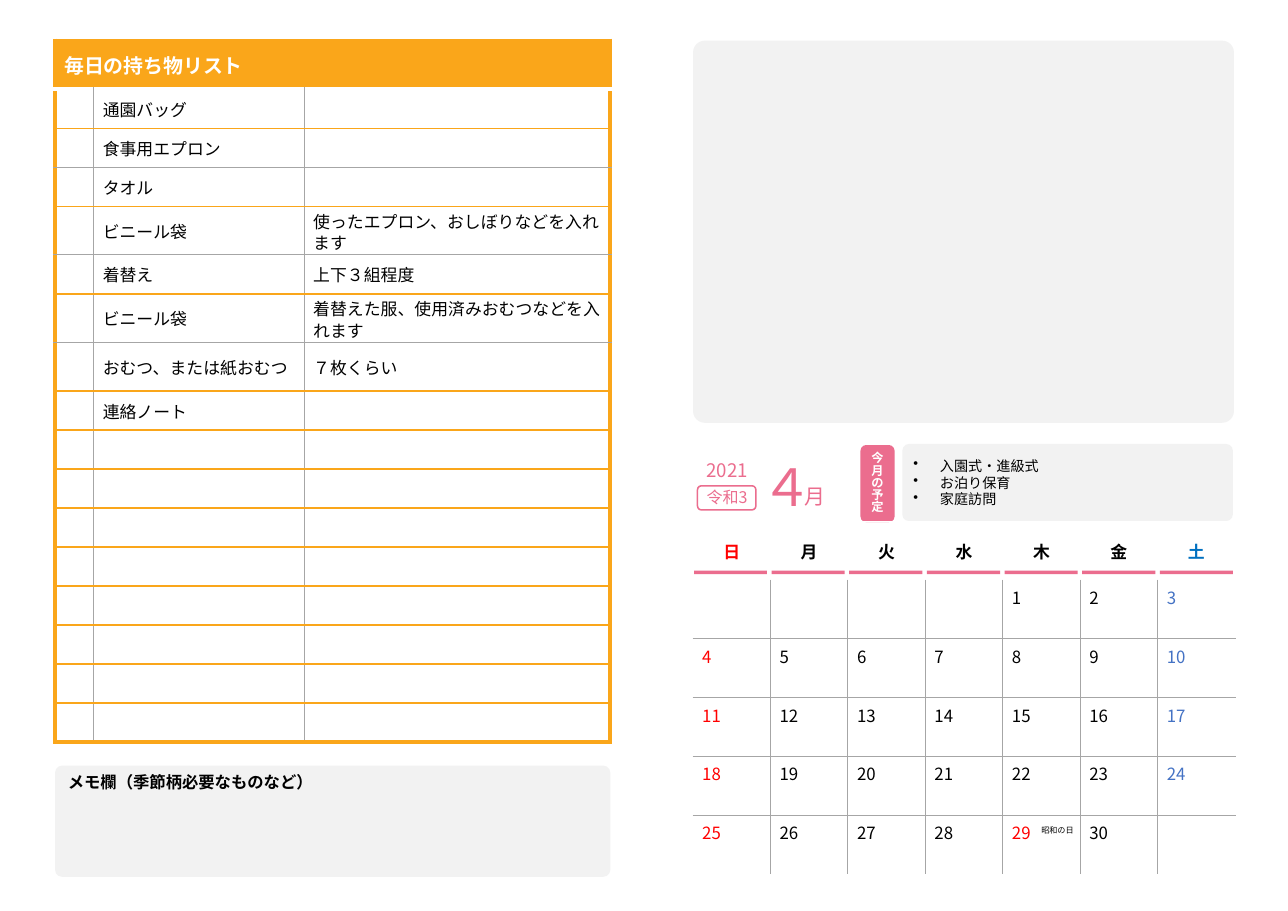
import pptx
import pptx.util
import pptx.dml.color
import pptx.enum.shapes
import pptx.enum.text
import pptx.oxml.ns
from lxml import etree

Pt = pptx.util.Pt
RGB = pptx.dml.color.RGBColor.from_string
qn = pptx.oxml.ns.qn
ALIGN = pptx.enum.text.PP_ALIGN
ANCHOR = pptx.enum.text.MSO_ANCHOR
ROUNDED = pptx.enum.shapes.MSO_SHAPE.ROUNDED_RECTANGLE
RECTANGLE = pptx.enum.shapes.MSO_SHAPE.RECTANGLE
FONT = "Noto Sans CJK JP"
COLORS = {
    "orange": "FAA61A", "pink": "EB6D8E", "panel": "F2F2F2", "grid": "A6A6A6",
    "white": "FFFFFF", "black": "000000", "sunday": "FF0000",
    "saturday": "4472C4", "saturday_head": "0070C0",
}


def write(frame, text, size=11, color="black", bold=False, align=ALIGN.LEFT,
          anchor=ANCHOR.TOP, margins=(6, 3, 6, 3), spacing=None, bullet=False):
    frame.word_wrap = True
    frame.vertical_anchor = anchor
    frame.margin_left, frame.margin_top, frame.margin_right, frame.margin_bottom = map(Pt, margins)
    for index, line in enumerate(text.split("\n")):
        paragraph = frame.add_paragraph() if index else frame.paragraphs[0]
        paragraph.alignment = align
        if spacing:
            paragraph.line_spacing = Pt(spacing)
        if bullet:
            properties = paragraph._p.get_or_add_pPr()
            properties.set("marL", str(Pt(17.3)))
            properties.set("indent", str(-Pt(17.3)))
            etree.SubElement(properties, qn("a:buChar")).set("char", "•")
        if not line:
            # Keeps an empty cell from growing to the default text size
            etree.SubElement(paragraph._p, qn("a:endParaRPr")).set("sz", str(size * 100))
            continue
        run = paragraph.add_run()
        run.text = line
        run.font.size, run.font.bold, run.font.name = Pt(size), bold, FONT
        run.font.color.rgb = RGB(COLORS[color])
        etree.SubElement(run._r.get_or_add_rPr(), qn("a:ea")).set("typeface", FONT)


def format_cell(cell, left, top, right, bottom, fill=None):
    properties = cell._tc.get_or_add_tcPr()
    for side, (color, width) in zip("LRTB", (left, right, top, bottom)):
        line = etree.SubElement(properties, qn(f"a:ln{side}"), w=str(Pt(width)))
        solid = etree.SubElement(line, qn("a:solidFill"))
        etree.SubElement(solid, qn("a:srgbClr")).set("val", COLORS[color])
    if fill:
        cell.fill.solid()
        cell.fill.fore_color.rgb = RGB(COLORS[fill])
    else:
        cell.fill.background()


presentation = pptx.Presentation()
presentation.slide_width, presentation.slide_height = Pt(841.68), Pt(595.44)
slide = presentation.slides.add_slide(presentation.slide_layouts[6])

# Rounded panels: photo space, plans, plans label, memo, era frame
plans = "入園式・進級式\nお泊り保育\n家庭訪問"
panels = [
    ((452.9, 26.6, 353.5, 249.8), 0.031, "panel", None, "", {}),
    ((589.7, 290.2, 216, 50.4), 0.087, "panel", None, plans,
     dict(size=9.2, anchor=ANCHOR.MIDDLE, spacing=11, bullet=True)),
    ((562.3, 290.9, 22.3, 50.4), 0.167, "pink", None, "今月の予定",
     dict(size=8, color="white", bold=True, align=ALIGN.CENTER,
          anchor=ANCHOR.MIDDLE, margins=(4, 0, 4, 0), spacing=8)),
    ((36, 500.4, 362.9, 72.7), 0.064, "panel", None, "メモ欄（季節柄必要なものなど）",
     dict(size=10.7, bold=True, margins=(7, 3, 7, 3))),
    ((455.8, 317.5, 38.2, 15.8), 0.167, None, "pink", "", {}),
]
for box, radius, fill, outline, text, style in panels:
    panel = slide.shapes.add_shape(ROUNDED, *map(Pt, box))
    panel.adjustments[0] = radius
    panel.shadow.inherit = False
    if fill:
        panel.fill.solid()
        panel.fill.fore_color.rgb = RGB(COLORS[fill])
    else:
        panel.fill.background()
    if outline:
        panel.line.color.rgb = RGB(COLORS[outline])
        panel.line.width = Pt(1)
    else:
        panel.line.fill.background()
    if text:
        write(panel.text_frame, text, **style)

# Bars under the weekdays
for day in range(7):
    bar = slide.shapes.add_shape(RECTANGLE, Pt(453.5 + 50.75 * day), Pt(373), Pt(47.8), Pt(2.3))
    bar.shadow.inherit = False
    bar.fill.solid()
    bar.fill.fore_color.rgb = RGB(COLORS["pink"])
    bar.line.fill.background()

# April calendar: the 1st falls on a Thursday
weekdays = "日月火水木金土"
first_column, last_date, holiday = 4, 30, 29
calendar = slide.shapes.add_table(6, 7, Pt(452.9), Pt(340.6), Pt(354.2), Pt(231.1)).table
calendar.first_row = calendar.horz_banding = False
white, gray = ("white", 0.75), ("grid", 0.75)
for column in calendar.columns:
    column.width = Pt(50.6)
for week, row in enumerate(calendar.rows):
    row.height = Pt(38.52)
    for day, cell in enumerate(row.cells):
        if week == 0:
            color = {0: "sunday", 6: "saturday_head"}.get(day, "black")
            write(cell.text_frame, weekdays[day], color=color, bold=True, align=ALIGN.CENTER)
            cell.vertical_anchor = ANCHOR.MIDDLE
            format_cell(cell, white, white, white, white)
        else:
            date = (week - 1) * 7 + day - first_column + 1
            color = {0: "sunday", 6: "saturday"}.get(day, "black")
            text = str(date) if 1 <= date <= last_date else ""
            write(cell.text_frame, text, color="sunday" if date == holiday else color)
            format_cell(cell, gray if day else white, gray if week > 1 else white,
                        gray if day < 6 else white, gray if week < 5 else white)
        cell.margin_left = cell.margin_right = Pt(6)
        cell.margin_top = cell.margin_bottom = Pt(3)

# Daily belongings list
belongings = [
    ("通園バッグ", ""),
    ("食事用エプロン", ""),
    ("タオル", ""),
    ("ビニール袋", "使ったエプロン、おしぼりなどを入れます"),
    ("着替え", "上下３組程度"),
    ("ビニール袋", "着替えた服、使用済みおむつなどを入れます"),
    ("おむつ、または紙おむつ", "７枚くらい"),
    ("連絡ノート", ""),
] + [("", "")] * 8
tall_rows, gray_below = (0, 4, 6, 7), (2, 4, 6)
checklist = slide.shapes.add_table(17, 3, Pt(36), Pt(26.6), Pt(362.9), Pt(458.7)).table
checklist.first_row = checklist.horz_banding = False
for column, width in zip(checklist.columns, (25.2, 137.5, 200.2)):
    column.width = Pt(width)
edge, rule, gap = ("orange", 3), ("orange", 1), ("white", 3)
for number, row in enumerate(checklist.rows):
    row.height = Pt(31.8 if number in tall_rows else 25.5)
    top = gap if number == 1 else gray if number - 1 in gray_below else rule
    bottom = edge if number == 16 else gray if number in gray_below else rule
    for position, cell in enumerate(row.cells):
        cell.margin_left = cell.margin_right = Pt(6)
        cell.margin_top = cell.margin_bottom = Pt(3)
        cell.vertical_anchor = ANCHOR.MIDDLE
        if number == 0:
            format_cell(cell, edge, edge, edge, gap, "orange")
            continue
        format_cell(cell, gray if position else edge, top, gray if position < 2 else edge, bottom)
        text = ("",) + belongings[number - 1]
        two_lines = len(text[position]) > 16
        write(cell.text_frame, text[position], spacing=14.3 if two_lines else None)
        cell.vertical_anchor = ANCHOR.MIDDLE
        cell.margin_left = cell.margin_right = Pt(6)
        cell.margin_top, cell.margin_bottom = Pt(3), Pt(0 if two_lines else 3)
heading = checklist.cell(0, 0)
heading.merge(checklist.cell(0, 2))
write(heading.text_frame, "毎日の持ち物リスト", size=13, color="white", bold=True)
heading.vertical_anchor = ANCHOR.MIDDLE
heading.margin_left = heading.margin_right = Pt(6)
heading.margin_top = heading.margin_bottom = Pt(3)

# Year, era, month and holiday name
captions = [
    ("４", (491, 297.4, 38.2, 48.2), 33.6, "pink", ALIGN.LEFT, (6.6, 0, 0, 0)),
    ("月", (519.1, 313.9, 28.1, 23.8), 13.7, "pink", ALIGN.LEFT, (6.6, 2, 0, 2)),
    ("令和3", (452.9, 316.1, 44.6, 20.2), 10.5, "pink", ALIGN.CENTER, (0, 2.5, 0, 2.5)),
    ("2021", (452.9, 297.4, 44.6, 22.3), 12.2, "pink", ALIGN.CENTER, (0, 2.5, 0, 2.5)),
    ("昭和の日", (673.9, 536.4, 36, 13.7), 5.3, "black", ALIGN.LEFT, (6.6, 3, 0, 3)),
]
for text, box, size, color, align, margins in captions:
    caption = slide.shapes.add_textbox(*map(Pt, box))
    write(caption.text_frame, text, size=size, color=color, align=align, margins=margins)

presentation.save("out.pptx")
